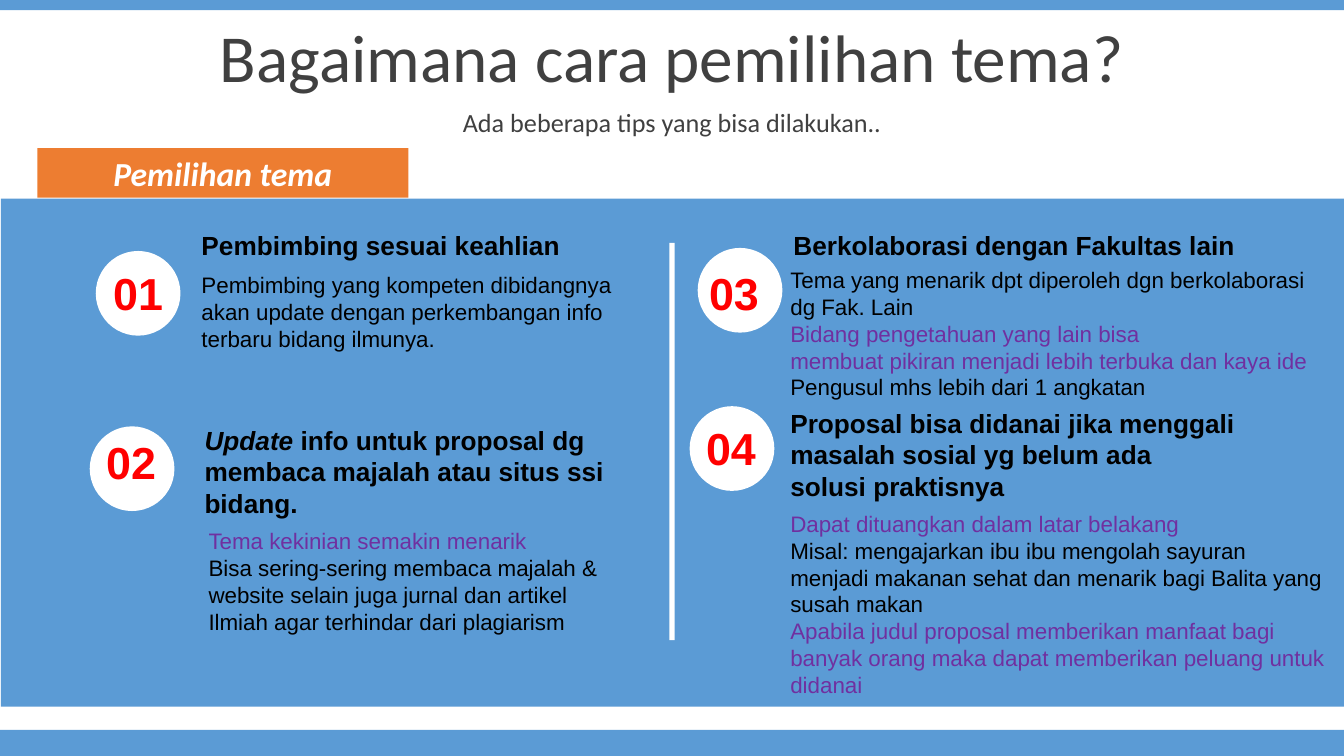
from pptx import Presentation
from pptx.dml.color import RGBColor
from pptx.enum.shapes import MSO_SHAPE as SHAPE
from pptx.enum.text import MSO_ANCHOR as ANCHOR, MSO_AUTO_SIZE as FIT, PP_ALIGN as ALIGN
from pptx.util import Emu, Pt

PX = 9144  # one px is a hundredth of an inch
BLUE, ORANGE, WHITE = "5B9BD5", "ED7D31", "FFFFFF"
GREY, BLACK, PURPLE, RED = "404040", "000000", "7030A0", "FF0000"


def px(*lengths):
    return [Emu(n * PX) for n in lengths]


def rgb(value):
    return RGBColor.from_string(value)


def run(text, **fmt):
    return text, fmt


class Deck:
    font, size, color = "Arial", 16, BLACK

    def __init__(self, width, height):
        self.prs = Presentation()
        self.prs.slide_width, self.prs.slide_height = px(width, height)
        self.s = self.prs.slides.add_slide(self.prs.slide_layouts[6])

    def shape(self, box, fill, kind=SHAPE.RECTANGLE):
        sp = self.s.shapes.add_shape(kind, *px(*box))
        sp.shadow.inherit = False
        sp.fill.solid()
        sp.fill.fore_color.rgb = rgb(fill)
        sp.line.fill.background()
        return sp

    def fill_text(self, tf, paragraphs, align=ALIGN.LEFT, spacing=None, before=None, **base):
        """Each paragraph is a list of runs; base is the format they share."""
        tf.word_wrap = True
        for i, runs in enumerate(paragraphs):
            p = tf.paragraphs[0] if i == 0 else tf.add_paragraph()
            p.alignment, p.line_spacing, p.space_before = align, spacing, before
            for text, fmt in runs:
                self.add_run(p, text, **{**base, **fmt})

    def add_run(self, p, text, font=None, size=None, color=None, bold=False, italic=False):
        r = p.add_run()
        r.text = text
        r.font.name = font or self.font
        r.font.size = Pt(size or self.size)
        r.font.color.rgb = rgb(color or self.color)
        r.font.bold, r.font.italic = bold, italic

    def text(self, box, paragraphs, anchor=ANCHOR.TOP, fit=FIT.SHAPE_TO_FIT_TEXT, **fmt):
        tf = self.s.shapes.add_textbox(*px(*box)).text_frame
        self.fill_text(tf, paragraphs, **fmt)
        tf.vertical_anchor, tf.auto_size = anchor, fit

    def banner(self, box, text, size):
        self.text(box, [[run(text)]], anchor=ANCHOR.MIDDLE, fit=FIT.NONE, align=ALIGN.CENTER,
                  spacing=0.9, before=Pt(10), font="Calibri", size=size, color=GREY)

    def tip(self, number, circle, label, heading_box, heading, body_box, body):
        self.shape((*circle, 84, 84), WHITE, SHAPE.OVAL)
        self.text(body_box, body)
        self.text(heading_box, heading, size=18.7, bold=True)
        self.text((*label, 94, 64), [[run(f"{number:02}")]], align=ALIGN.CENTER,
                  size=32, color=RED, bold=True)


# Each tip: circle corner, number corner, heading box and text, body box and text
TIPS = [
    ((95, 249), (90, 259),
     (190, 223, 389, 42), [[run("Pembimbing sesuai keahlian")]],
     (190, 264, 435, 118),
     [[run("Pembimbing yang kompeten dibidangnya akan update dengan "
           "perkembangan info terbaru bidang ilmunya.")]]),
    ((89, 423), (83, 426),
     (193, 416, 431, 104),
     [[run("Update ", italic=True), run("info untuk proposal dg")],
      [run("membaca majalah atau situs ssi")],
      [run("bidang.")]],
     (197, 518, 433, 118),
     [[run("Tema kekinian semakin menarik", color=PURPLE)],
      [run("Bisa sering-sering membaca majalah & website selain juga jurnal dan artikel")],
      [run("Ilmiah agar terhindar dari plagiarism")]]),
    ((692, 246), (681, 259),
     (777, 223, 558, 42), [[run("Berkolaborasi dengan Fakultas lain")]],
     (774, 259, 558, 172),
     [[run("Tema yang menarik dpt diperoleh dgn berkolaborasi dg Fak. Lain")],
      [run("Bidang pengetahuan yang lain bisa", color=PURPLE)],
      [run("membuat pikiran menjadi lebih terbuka dan kaya ide", color=PURPLE)],
      [run("Pengusul mhs lebih dari 1 angkatan")]]),
    ((684, 403), (678, 412),
     (774, 399, 505, 104),
     [[run("Proposal bisa didanai jika menggali")],
      [run("masalah sosial yg belum ada")],
      [run("solusi praktisnya")]],
     (774, 501, 560, 199),
     [[run("Dapat dituangkan dalam latar belakang", color=PURPLE)],
      [run("Misal: mengajarkan ibu ibu mengolah sayuran")],
      [run("menjadi makanan sehat dan menarik bagi Balita yang susah makan")],
      [run("Apabila judul proposal memberikan manfaat bagi banyak orang "
           "maka dapat memberikan peluang untuk didanai", color=PURPLE)]]),
]


def main():
    deck = Deck(1333, 750)

    # Edge bars, title and subtitle
    deck.shape((0, 724, 1333, 26), BLUE)
    deck.shape((0, 0, 1333, 10), BLUE)
    deck.banner((0, 18, 1333, 84), "Bagaimana cara pemilihan tema?", 48)
    deck.banner((0, 102, 1333, 42), "Ada beberapa tips yang bisa dilakukan..", 18.7)

    # Panel with its divider and tab
    deck.shape((1, 197, 1333, 504), BLUE)
    deck.shape((664, 241, 5, 394), WHITE)
    tab = deck.shape((37, 147, 368, 49), ORANGE).text_frame
    tab.vertical_anchor = ANCHOR.MIDDLE
    deck.fill_text(tab, [[run("Pemilihan tema")]], align=ALIGN.CENTER, font="Calibri",
                   size=24, color=WHITE, bold=True, italic=True)

    # Numbered tips
    for number, tip in enumerate(TIPS, 1):
        deck.tip(number, *tip)

    deck.prs.save("out.pptx")


if __name__ == "__main__":
    main()
